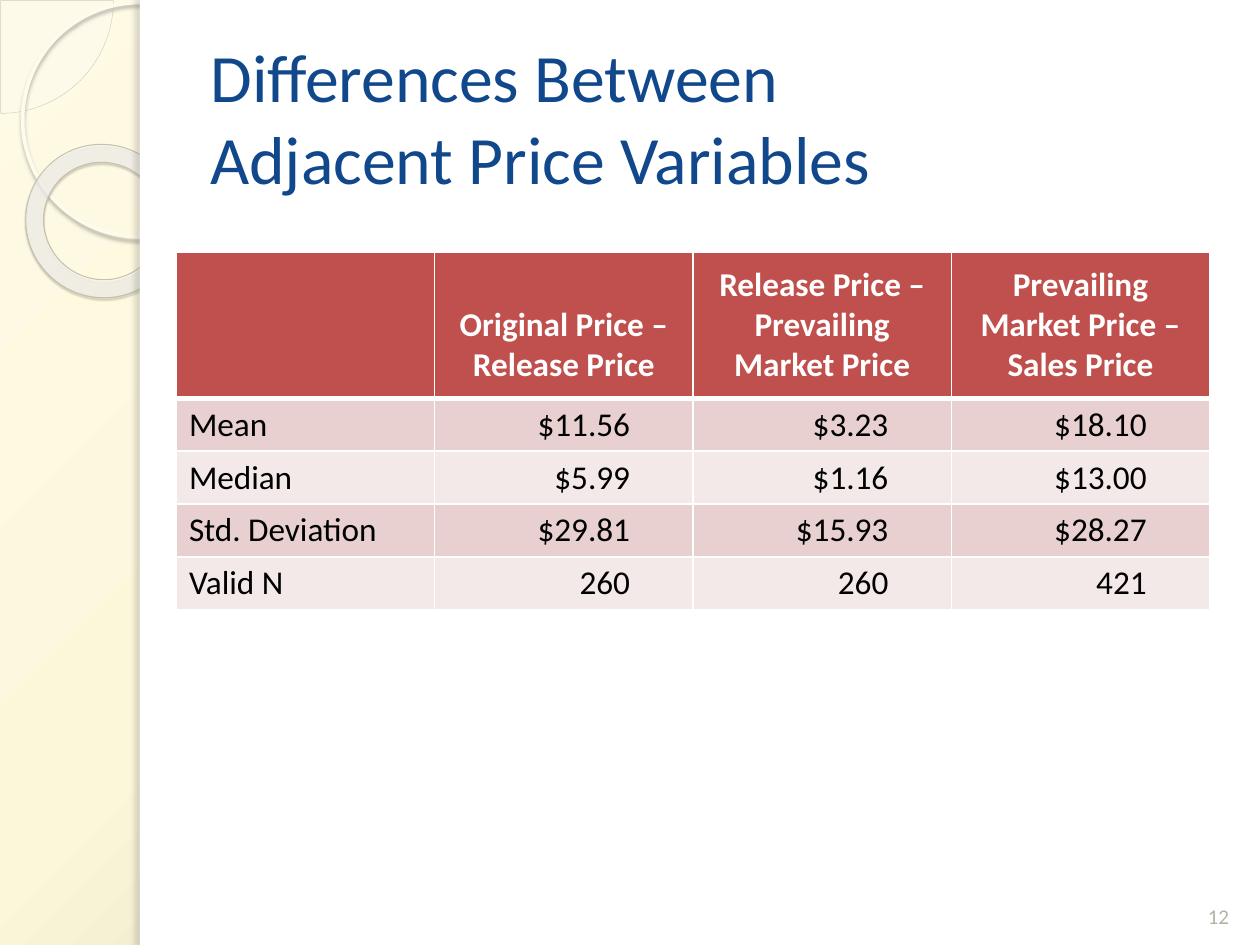
from lxml.etree import SubElement
from pptx import Presentation
from pptx.dml.color import RGBColor
from pptx.enum.shapes import MSO_SHAPE
from pptx.enum.text import MSO_ANCHOR, PP_ALIGN
from pptx.oxml.ns import qn
from pptx.util import Inches, Pt

THEME = {
    "title": {"name": "Calibri", "size": Pt(38.7), "bold": False, "color": "11478B"},
    "header": {"name": "Calibri", "size": Pt(19), "bold": True, "color": "FFFFFF"},
    "body": {"name": "Calibri", "size": Pt(19), "bold": False, "color": "000000"},
    "number": {"name": "Calibri", "size": Pt(12), "bold": False, "color": "B5B2A2"},
    "header_fill": "C0504D",
    "bands": ["E8D0D0", "F4E9E9"],
    "border": "FFFFFF",
    "panel": "FFFFFF",
    # Gradient stops are position, colour, opacity; then the focus rectangle
    "backdrop": ([(0, "FEFAE4", 100), (40, "FDF7DA", 100), (100, "C2BDA3", 100)],
                 (-24, -20, 124, 120)),
    "ring": ([(0, "FEFDFA", 70), (70, "FFFFFC", 55), (100, "E2DBB7", 60)],
             (-408, -50, 508, 150)),
}

deck = Presentation()
deck.slide_width, deck.slide_height = Inches(10), Inches(7.5)
COLUMN, ROW = deck.slide_width / 100, deck.slide_height / 75
page = deck.slides.add_slide(deck.slide_layouts[5])


def add_color(parent, value, opacity=100):
    color = SubElement(parent, qn("a:srgbClr"), val=value)
    if opacity < 100:
        SubElement(color, qn("a:alpha"), val=str(opacity * 1000))


def write(frame, text, style, align, anchor):
    frame.text = text
    frame.word_wrap = True
    frame.vertical_anchor = anchor
    para = frame.paragraphs[0]
    para.alignment = align
    for span in para.runs:
        for name, value in THEME[style].items():
            if name == "color":
                span.font.color.rgb = RGBColor.from_string(value)
            else:
                setattr(span.font, name, value)


# Side decoration and white content panel; places are in grid columns and rows
decoration = [
    {"kind": MSO_SHAPE.PIE, "at": (-8.9, -8.9, 17.9, 17.9), "adjust": [0, 54],
     "fill": ("FDFDF9", 33), "line": ("D1CEBB", 0.25)},
    {"kind": MSO_SHAPE.OVAL, "at": (1.8, 0.2, 18.6, 18.6),
     "line": ("FEFBEC", 2.15), "shadow": ("B2B0A4", 85, 2, 2, 90)},
    {"kind": MSO_SHAPE.DONUT, "at": (2, 11.5, 12.3, 12.1), "adjust": [0.118],
     "rotation": 38.6, "gradient": THEME["ring"], "line": ("C5C1AE", 0.58),
     "shadow": ("5A5850", 35, 1, 1.2, 75)},
    {"kind": MSO_SHAPE.RECTANGLE, "at": (11.1, 0, 88.9, 75), "fill": (THEME["panel"], 100)},
    {"kind": MSO_SHAPE.RECTANGLE, "at": (11.1, 0, 0.8, 75), "fill": (THEME["panel"], 100),
     "shadow": ("77756F", 25, 3, 3, 180)},
]
gradients = [(page.background.fill, page._element, THEME["backdrop"])]
for part in decoration:
    left, top, width, height = part["at"]
    shape = page.shapes.add_shape(part["kind"], int(left * COLUMN), int(top * ROW),
                                  int(width * COLUMN), int(height * ROW))
    shape.rotation = part.get("rotation", 0)
    for index, value in enumerate(part.get("adjust", [])):
        shape.adjustments[index] = value
    shape.fill.background()
    if "fill" in part:
        shape.fill.solid()
        solid = shape._element.spPr.find(qn("a:solidFill"))
        add_color(solid, *part["fill"])
    if "gradient" in part:
        gradients.append((shape.fill, shape._element, part["gradient"]))
    shape.line.fill.background()
    if "line" in part:
        color, weight = part["line"]
        shape.line.color.rgb = RGBColor.from_string(color)
        shape.line.width = Pt(weight)
    shape.shadow.inherit = False
    if "shadow" in part:
        color, opacity, blur, distance, angle = part["shadow"]
        effects = shape._element.spPr.find(qn("a:effectLst"))
        shadow = SubElement(effects, qn("a:outerShdw"), blurRad=str(Pt(blur)),
                            dist=str(Pt(distance)), dir=str(angle * 60000),
                            algn="ctr", rotWithShape="0")
        add_color(shadow, color, opacity)

# Circular gradients of the backdrop and the ring
for fill, element, (stops, focus) in gradients:
    fill.gradient()
    gradient = next(element.iter(qn("a:gradFill")))
    gradient.clear()
    stop_list = SubElement(gradient, qn("a:gsLst"))
    for position, color, opacity in stops:
        stop = SubElement(stop_list, qn("a:gs"), pos=str(position * 1000))
        add_color(stop, color, opacity)
    circle = SubElement(gradient, qn("a:path"), {"path": "circle"})
    SubElement(circle, qn("a:fillToRect"),
               {side: str(share * 1000) for side, share in zip("ltrb", focus)})

# Title, brought in front of the panel
title = page.shapes.title
title.left, title.top = int(15.7 * COLUMN), int(3 * ROW)
title.width, title.height = int(82 * COLUMN), int(12.5 * ROW)
write(title.text_frame, "Differences Between\vAdjacent Price Variables", "title",
      PP_ALIGN.LEFT, MSO_ANCHOR.MIDDLE)
page.shapes._spTree.append(title._element)

# Table of price differences
records = [
    ["", "Original Price – Release Price", "Release Price – Prevailing Market Price",
     "Prevailing Market Price – Sales Price"],
    ["Mean", "$11.56", "$3.23", "$18.10"],
    ["Median", "$5.99", "$1.16", "$13.00"],
    ["Std. Deviation", "$29.81", "$15.93", "$28.27"],
    ["Valid N", "260", "260", "421"],
]
table = page.shapes.add_table(len(records), len(records[0]), int(14 * COLUMN), int(20 * ROW),
                              int(82 * COLUMN), int(27.7 * ROW)).table
for row, record in enumerate(records):
    table.rows[row].height = int((4.1 if row else 11.3) * ROW)
    for column, text in enumerate(record):
        cell = table.cell(row, column)
        cell.margin_left = Inches(0.1)
        cell.margin_right = Inches(0.5 if row and column else 0.1)
        cell.margin_top = cell.margin_bottom = Inches(0.05 if row else 0.1)
        if row == 0:
            look = ("header", PP_ALIGN.CENTER, MSO_ANCHOR.BOTTOM)
        else:
            look = ("body", PP_ALIGN.RIGHT if column else PP_ALIGN.LEFT, MSO_ANCHOR.TOP)
        write(cell.text_frame, text, *look[:2], None)
        cell.vertical_anchor = look[2]
        for side in "LRTB":
            heavy = (row, side) in [(0, "B"), (1, "T")]
            border = SubElement(cell._tc.get_or_add_tcPr(), qn("a:ln" + side),
                                w=str(Pt(3 if heavy else 1)))
            add_color(SubElement(border, qn("a:solidFill")), THEME["border"])
        cell.fill.solid()
        band = THEME["bands"][(row - 1) % 2] if row else THEME["header_fill"]
        cell.fill.fore_color.rgb = RGBColor.from_string(band)

# Page number
box = page.shapes.add_textbox(int(94.2 * COLUMN), int(69 * ROW), int(5 * COLUMN), int(5.2 * ROW))
write(box.text_frame, "12", "number", PP_ALIGN.CENTER, MSO_ANCHOR.BOTTOM)

deck.save("out.pptx")
